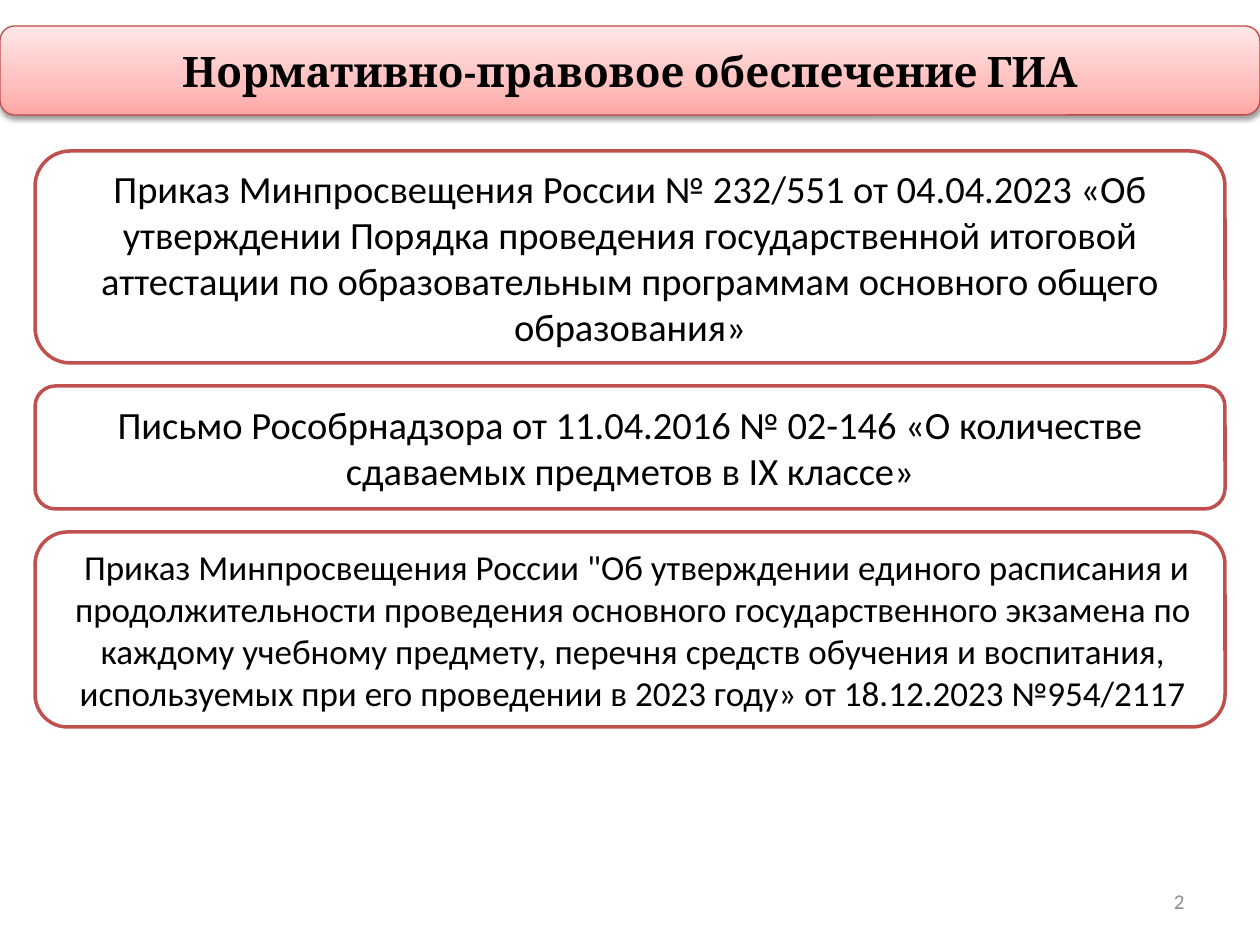
import copy

import pptx
import pptx.dml.color
import pptx.enum.shapes
import pptx.enum.text
import pptx.oxml
import pptx.oxml.ns
import pptx.util

PX = 914400 / 126
ALIGN = pptx.enum.text.PP_ALIGN
COLORS = {
    "text": "000000",
    "number": "8C8C8C",
    "white": "FFFFFF",
    "border": "C0504D",
    "banner_border": "BF4C48",
    "banner_low": "FFA6A5",
    "banner_mid": "FFC0BF",
    "banner_high": "FFE7E7",
}
BANNER_STOPS = [(0, "banner_low"), (0.35, "banner_mid"), (1, "banner_high")]
SHADOW = (
    '<a:outerShdw %s blurRad="39370" dist="20320" dir="5400000" rotWithShape="0">'
    '<a:srgbClr val="000000"><a:alpha val="38000"/></a:srgbClr></a:outerShdw>'
    % pptx.oxml.ns.nsdecls("a")
)


def px(n):
    return pptx.util.Emu(round(n * PX))


def rgb(name):
    return pptx.dml.color.RGBColor.from_string(COLORS[name])


class Deck:
    def __init__(self, width, height):
        self.prs = pptx.Presentation()
        self.prs.slide_width, self.prs.slide_height = px(width), px(height)
        self.s = self.prs.slides.add_slide(self.prs.slide_layouts[6])

    def add_text(self, sp, text, size, font="Calibri", color="text",
                 bold=False, align=ALIGN.CENTER):
        tf = sp.text_frame
        tf.word_wrap = True
        tf.vertical_anchor = pptx.enum.text.MSO_ANCHOR.MIDDLE
        p = tf.paragraphs[0]
        p.alignment = align
        r = p.add_run()
        r.text = text
        r.font.size = pptx.util.Pt(size)
        r.font.name = font
        r.font.bold = bold
        r.font.color.rgb = rgb(color)
        return p

    def label(self, x, y, w, h, text, size, **style):
        sp = self.s.shapes.add_textbox(px(x), px(y), px(w), px(h))
        self.add_text(sp, text, size, **style)

    def box(self, x, y, w, h, border="border", weight=2):
        sp = self.s.shapes.add_shape(
            pptx.enum.shapes.MSO_SHAPE.ROUNDED_RECTANGLE,
            px(x), px(y), px(w), px(h))
        sp.shadow.inherit = False
        sp.fill.solid()
        sp.fill.fore_color.rgb = rgb("white")
        sp.line.color.rgb = rgb(border)
        sp.line.width = pptx.util.Pt(weight)
        return sp

    def banner(self, x, y, w, h, text, size):
        sp = self.box(x, y, w, h, "banner_border", 0.75)
        sp.fill.gradient()
        sp.fill.gradient_angle = 90
        # The default gradient has two stops; a third is needed
        stops = sp.element.spPr.find(".//" + pptx.oxml.ns.qn("a:gsLst"))
        stops.append(copy.deepcopy(stops[0]))
        for stop, (position, color) in zip(sp.fill.gradient_stops, BANNER_STOPS):
            stop.position = position
            stop.color.rgb = rgb(color)
        effects = sp.element.spPr.find(pptx.oxml.ns.qn("a:effectLst"))
        effects.append(pptx.oxml.parse_xml(SHADOW))
        self.add_text(sp, text, size, font="Cambria", bold=True)

    def card(self, x, y, w, h, text, size, indent=0):
        p = self.add_text(self.box(x, y, w, h), text, size)
        if indent:
            p._p.get_or_add_pPr().set("marL", str(px(indent)))


def main():
    deck = Deck(1260, 945)

    # Title
    deck.banner(0, 26, 1260, 89, "Нормативно-правовое обеспечение ГИА", 24)

    # Regulations: height, text size, left indent, text
    regulations = [
        (212, 22, 0,
         "Приказ Минпросвещения России № 232/551 от 04.04.2023 «Об утверждении "
         "Порядка проведения государственной итоговой аттестации по "
         "образовательным программам основного общего образования»"),
        (123, 22, 0,
         "Письмо Рособрнадзора от 11.04.2016 № 02-146 «О количестве сдаваемых "
         "предметов в IX классе»"),
        (195, 20, 6,
         " Приказ Минпросвещения России \"Об утверждении единого расписания и "
         "продолжительности проведения основного государственного экзамена по "
         "каждому учебному предмету, перечня средств обучения и воспитания, "
         "используемых при его проведении в 2023 году» от 18.12.2023 №954/2117"),
    ]
    top, gap = 151, 23
    for height, size, indent, text in regulations:
        deck.card(35, top, 1190, height, text, size, indent)
        top += height + gap

    # Slide number
    deck.label(903, 876, 294, 50, "2", 12, color="number", align=ALIGN.RIGHT)

    deck.prs.save("out.pptx")


if __name__ == "__main__":
    main()
